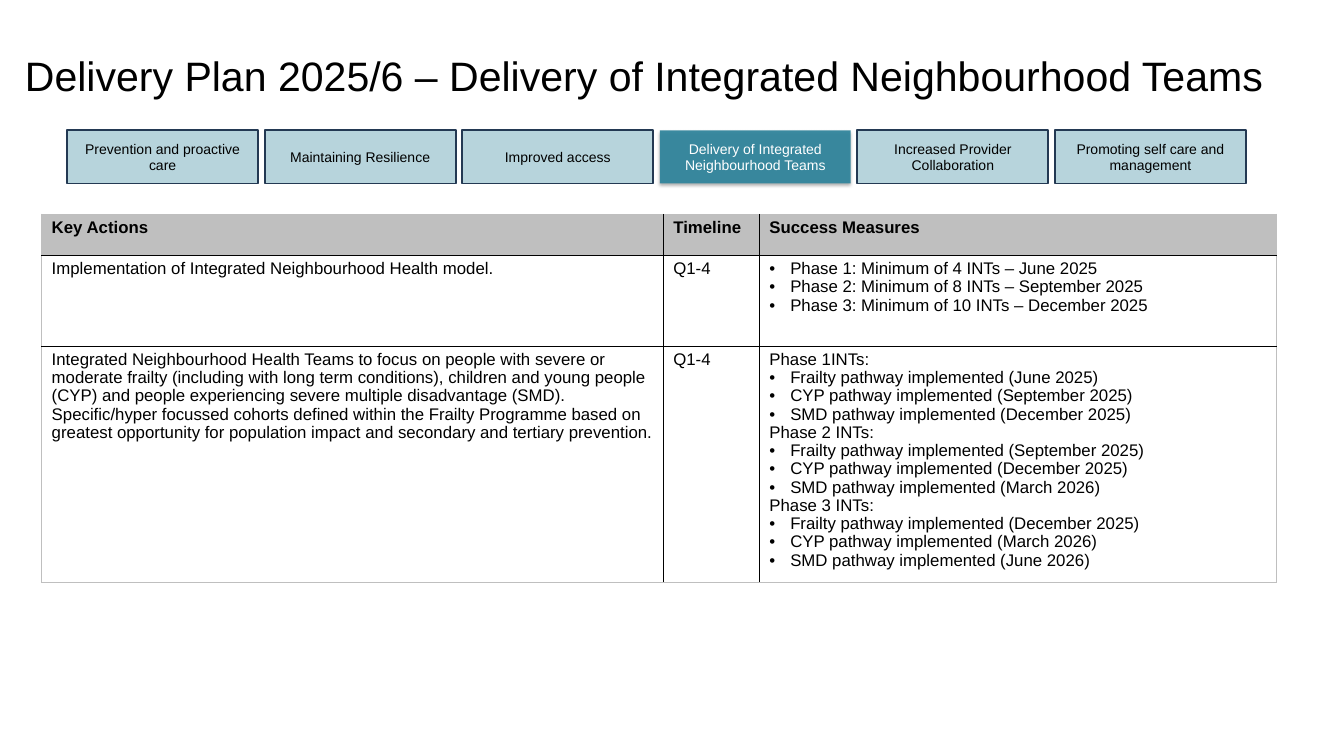
from lxml import etree
from pptx import Presentation
from pptx.dml.color import RGBColor
from pptx.enum.shapes import MSO_SHAPE
from pptx.enum.text import MSO_ANCHOR, PP_ALIGN
from pptx.oxml.ns import qn
from pptx.util import Inches, Pt

RECTANGLE = MSO_SHAPE.RECTANGLE
MIDDLE, TOP = MSO_ANCHOR.MIDDLE, MSO_ANCHOR.TOP
LEFT, CENTER = PP_ALIGN.LEFT, PP_ALIGN.CENTER

HEADING = "Delivery Plan 2025/6 – Delivery of Integrated Neighbourhood Teams"
PRIORITIES = [
    "Prevention and proactive care",
    "Maintaining Resilience",
    "Improved access",
    "Delivery of Integrated Neighbourhood Teams",
    "Increased Provider Collaboration",
    "Promoting self care and management",
]
CURRENT = 3
BULLET = "• "
PLAN = [
    (["Key Actions"], ["Timeline"], ["Success Measures"]),
    (
        ["Implementation of Integrated Neighbourhood Health model."],
        ["Q1-4"],
        [
            "• Phase 1: Minimum of 4 INTs – June 2025",
            "• Phase 2: Minimum of 8 INTs – September 2025",
            "• Phase 3: Minimum of 10 INTs – December 2025",
        ],
    ),
    (
        [
            "Integrated Neighbourhood Health Teams to focus on people with severe or "
            "moderate frailty (including with long term conditions), children and young "
            "people (CYP) and people experiencing severe multiple disadvantage (SMD). "
            "Specific/hyper focussed cohorts defined within the Frailty Programme based on "
            "greatest opportunity for population impact and secondary and tertiary prevention."
        ],
        ["Q1-4"],
        [
            "Phase 1INTs:",
            "• Frailty pathway implemented (June 2025)",
            "• CYP pathway implemented (September 2025)",
            "• SMD pathway implemented (December 2025)",
            "Phase 2 INTs:",
            "• Frailty pathway implemented (September 2025)",
            "• CYP pathway implemented (December 2025)",
            "• SMD pathway implemented (March 2026)",
            "Phase 3 INTs:",
            "• Frailty pathway implemented (December 2025)",
            "• CYP pathway implemented (March 2026)",
            "• SMD pathway implemented (June 2026)",
        ],
    ),
]

COLORS = {"text": "000000", "light": "FFFFFF", "teal": "31859C",
          "navy": "233953", "header": "BFBFBF", "rule": "000000"}
COLUMNS = [9.25, 1.43, 7.69]
ROWS = [0.61, 1.35, 3.51]
TAB_LEFT, TAB_TOP, TAB_WIDTH, TAB_HEIGHT, TAB_PITCH = 1, 1.94, 2.84, 0.79, 2.94
CELL_FORMAT = {"margin_left": Inches(0.15), "margin_right": Inches(0.15),
               "margin_top": Inches(0.07), "margin_bottom": Inches(0.07),
               "vertical_anchor": TOP}


def rgb(name):
    return RGBColor.from_string(COLORS[name])


def write(paragraph, text, size, color="text", bold=False, align=LEFT):
    paragraph.alignment = align
    run = paragraph.add_run()
    run.text = text
    run.font.color.rgb = rgb(color)
    for key, value in {"name": "Arial", "size": Pt(size), "bold": bold}.items():
        setattr(run.font, key, value)


def add_color(parent, name, alpha=None):
    color = etree.SubElement(parent, qn("a:srgbClr"), val=COLORS[name])
    if alpha:
        etree.SubElement(color, qn("a:alpha"), val=str(alpha * 1000))


def add_heading(slide):
    title = slide.shapes.title
    place = {"left": 0.27, "top": 0.03, "width": 19.09, "height": 2.17}
    for key, value in place.items():
        setattr(title, key, Inches(value))
    title.text_frame.vertical_anchor = MIDDLE
    write(title.text_frame.paragraphs[0], HEADING, 44)


def add_priority(slide, index, label):
    active = index == CURRENT
    tab = slide.shapes.add_shape(
        RECTANGLE, Inches(TAB_LEFT + index * TAB_PITCH), Inches(TAB_TOP),
        Inches(TAB_WIDTH), Inches(TAB_HEIGHT))
    tab.shadow.inherit = False
    tab.fill.solid()
    tab.fill.fore_color.rgb = rgb("teal")
    fill_color = tab.fill._xPr.find(qn("a:solidFill"))[0]
    etree.SubElement(fill_color, qn("a:alpha"), val="94000" if active else "35000")
    if active:
        tab.line.fill.background()
        effects = tab._element.spPr.find(qn("a:effectLst"))
        shadow = etree.SubElement(
            effects, qn("a:outerShdw"), blurRad=str(Pt(3.5)), dist=str(Pt(2.2)),
            dir="5400000", rotWithShape="0")
        add_color(shadow, "rule", 32)
    else:
        tab.line.color.rgb = rgb("navy")
        tab.line.width = Pt(2)
    tab.text_frame.word_wrap = True
    tab.text_frame.vertical_anchor = MIDDLE
    write(tab.text_frame.paragraphs[0], label, 15,
          "light" if active else "text", align=CENTER)


def set_borders(cell, row, column):
    outer = {"L": column == 0, "R": column == len(COLUMNS) - 1,
             "T": row == 0, "B": row == len(ROWS) - 1}
    properties = cell._tc.get_or_add_tcPr()
    for position, (side, edge) in enumerate(outer.items()):
        border = etree.Element(qn(f"a:ln{side}"), w=str(Pt(1)))
        add_color(etree.SubElement(border, qn("a:solidFill")),
                  "header" if edge else "rule")
        properties.insert(position, border)


def fill_cell(cell, row, column, lines):
    for key, value in CELL_FORMAT.items():
        setattr(cell, key, value)
    if row == 0:
        cell.fill.solid()
        cell.fill.fore_color.rgb = rgb("header")
    else:
        cell.fill.background()
    set_borders(cell, row, column)
    frame = cell.text_frame
    for number, line in enumerate(lines):
        paragraph = frame.add_paragraph() if number else frame.paragraphs[0]
        paragraph.line_spacing = 0.97
        write(paragraph, line.removeprefix(BULLET), 18, bold=row == 0)
        if line.startswith(BULLET):
            properties = paragraph._p.get_or_add_pPr()
            indent = Inches(0.31)
            properties.set("marL", str(indent))
            properties.set("indent", str(-indent))
            etree.SubElement(properties, qn("a:buFont"), typeface="Arial")
            etree.SubElement(properties, qn("a:buChar"), char=BULLET.strip())


def add_plan(slide):
    table = slide.shapes.add_table(
        len(ROWS), len(COLUMNS), Inches(0.62), Inches(3.19),
        Inches(sum(COLUMNS)), Inches(sum(ROWS))).table
    table.first_row = table.horz_banding = False
    for column, width in zip(table.columns, COLUMNS):
        column.width = Inches(width)
    for row, height in zip(table.rows, ROWS):
        row.height = Inches(height)
    for row, entries in enumerate(PLAN):
        for column, lines in enumerate(entries):
            fill_cell(table.cell(row, column), row, column, lines)


def main():
    deck = Presentation()
    deck.slide_width, deck.slide_height = Inches(20), Inches(11.25)
    slide = deck.slides.add_slide(deck.slide_layouts[5])
    add_heading(slide)
    for index, label in enumerate(PRIORITIES):
        add_priority(slide, index, label)
    add_plan(slide)
    deck.save("out.pptx")


if __name__ == "__main__":
    main()
